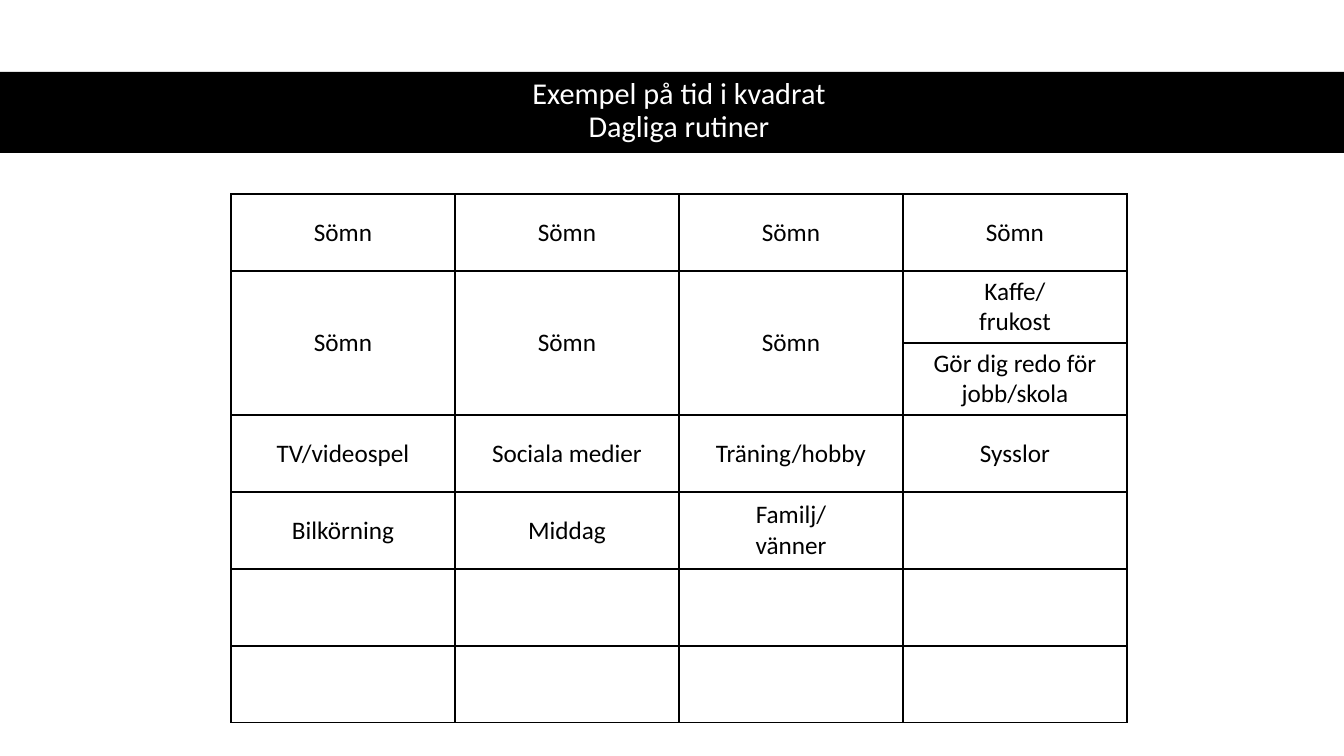
"""Builds the slide with an example of a day's routines in squares."""
from lxml.etree import SubElement
from pptx import Presentation
from pptx.dml.color import RGBColor
from pptx.enum.shapes import MSO_SHAPE
from pptx.enum.text import MSO_ANCHOR, PP_ALIGN
from pptx.oxml.ns import qn
from pptx.util import Emu, Pt

COLORS = {"ink": "000000", "paper": "FFFFFF"}
COLUMN_WIDTH = 224
ROW_HEIGHTS = [77, 72, 72, 77, 77, 77, 77]
ROUTINES = [
    ["Sömn", "Sömn", "Sömn", "Sömn"],
    ["Sömn", "Sömn", "Sömn", "Kaffe/\nfrukost"],
    ["", "", "", "Gör dig redo för jobb/skola"],
    ["TV/videospel", "Sociala medier", "Träning/hobby", "Sysslor"],
    ["Bilkörning", "Middag", "Familj/\nvänner", ""],
    [""] * 4,
    [""] * 4,
]


def px(length):
    return Emu(round(length * 914400 / 100.8))


def write(frame, text, size=18, color="ink", spacing=None):
    paragraph = frame.paragraphs[0]
    paragraph.text = text
    paragraph.alignment = PP_ALIGN.CENTER
    paragraph.line_spacing = spacing
    for run in paragraph.runs:
        run.font.name = "Calibri"
        run.font.size = Pt(size)
        run.font.color.rgb = RGBColor.from_string(COLORS[color])


deck = Presentation()
deck.slide_width, deck.slide_height = px(1344), px(756)
slide = deck.slides.add_slide(deck.slide_layouts[6])

band = slide.shapes.add_shape(MSO_SHAPE.RECTANGLE, px(0), px(72), px(1344), px(81))
band.shadow.inherit = False
band.fill.solid()
band.fill.fore_color.rgb = RGBColor.from_string(COLORS["ink"])
band.line.fill.background()

heading = slide.shapes.add_textbox(px(61), px(71), px(1236), px(81)).text_frame
heading.word_wrap = True
heading.vertical_anchor = MSO_ANCHOR.MIDDLE
write(heading, "Exempel på tid i kvadrat\nDagliga rutiner", size=21.6, color="paper", spacing=0.9)

day = slide.shapes.add_table(
    len(ROUTINES), 4, px(231), px(194), px(4 * COLUMN_WIDTH), px(sum(ROW_HEIGHTS))
).table
day.first_row = day.horz_banding = False
for column in day.columns:
    column.width = px(COLUMN_WIDTH)
for row, height in zip(day.rows, ROW_HEIGHTS):
    row.height = px(height)

for r, routines in enumerate(ROUTINES):
    for c, routine in enumerate(routines):
        square = day.cell(r, c)
        square.vertical_anchor = MSO_ANCHOR.MIDDLE
        write(square.text_frame, routine)
        properties = square._tc.get_or_add_tcPr()
        for side in ("a:lnL", "a:lnR", "a:lnT", "a:lnB"):
            edge = SubElement(properties, qn(side), w=str(Pt(1)))
            SubElement(SubElement(edge, qn("a:solidFill")), qn("a:srgbClr"), val=COLORS["ink"])
        square.fill.solid()
        square.fill.fore_color.rgb = RGBColor.from_string(COLORS["paper"])

for c in range(3):
    day.cell(1, c).merge(day.cell(2, c))

deck.save("out.pptx")
